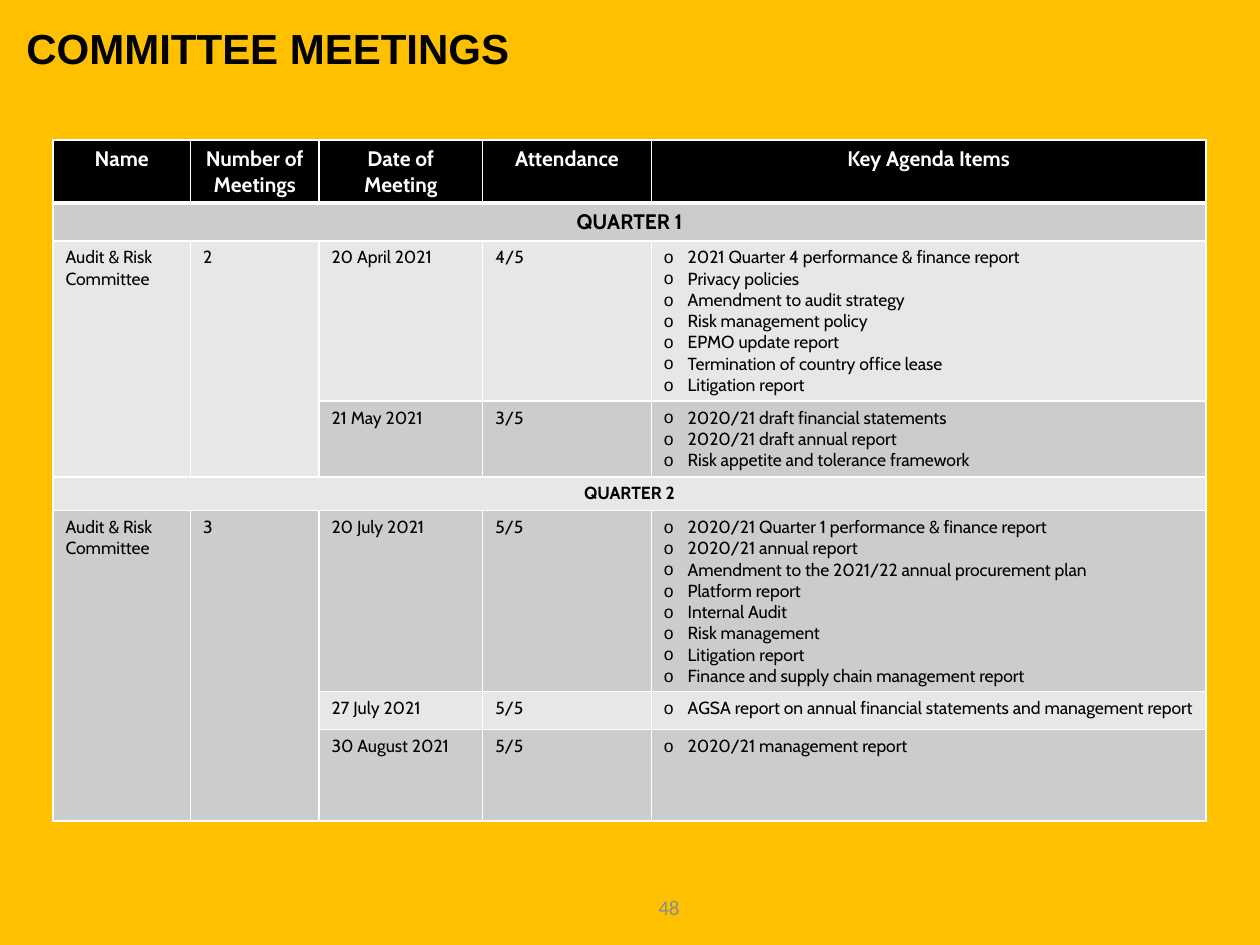
from lxml import etree
from pptx import Presentation
from pptx import util as u
from pptx.dml.color import RGBColor
from pptx.enum import text
from pptx.oxml.ns import qn

COLORS = {"back": "FFC000", "ink": "000000", "paper": "FFFFFF",
          "dark_band": "CCCCCC", "light_band": "E7E7E7", "number": "8C8C8C"}

COL_WIDTHS = [2.77, 2.59, 3.3, 3.4, 11.18]
ROW_HEIGHTS = [1.27, 0.74, 3.23, 1.52, 0.68, 3.65, 0.76, 1.85]
HEADINGS = ["Name", "Number of Meetings", "Date of Meeting", "Attendance",
            "Key Agenda Items"]

# Quarter, heading size, committee, meetings as (date, attendance, agenda)
QUARTERS = [
    ("QUARTER 1", 12, "Audit & Risk Committee", [
        ("20 April 2021", "4/5", [
            "2021 Quarter 4 performance & finance report",
            "Privacy policies",
            "Amendment to audit strategy",
            "Risk management policy",
            "EPMO update report",
            "Termination of country office lease",
            "Litigation report"]),
        ("21 May 2021", "3/5", [
            "2020/21 draft financial statements",
            "2020/21 draft annual report",
            "Risk appetite and tolerance framework"]),
    ]),
    ("QUARTER 2", 10, "Audit & Risk Committee", [
        ("20 July 2021", "5/5", [
            "2020/21 Quarter 1 performance & finance report",
            "2020/21 annual report",
            "Amendment to the 2021/22 annual procurement plan",
            "Platform report",
            "Internal Audit",
            "Risk management",
            "Litigation report",
            "Finance and supply chain management report"]),
        ("27 July 2021", "5/5", [
            "AGSA report on annual financial statements and management report"]),
        ("30 August 2021", "5/5", ["2020/21 management report"]),
    ]),
]


def rgb(name):
    return RGBColor.from_string(COLORS[name])


class Deck:
    """Holds the text style and the current slide."""
    table_font = "Cabin"
    left, center, right = (text.PP_ALIGN.LEFT, text.PP_ALIGN.CENTER,
                           text.PP_ALIGN.RIGHT)

    def __init__(self, prs):
        self.slide = prs.slides.add_slide(prs.slide_layouts[5])
        fill = self.slide.background.fill
        fill.solid()
        fill.fore_color.rgb = rgb("back")

    def add_text(self, p, words, size, font, color="ink", bold=False,
                 align=None):
        p.alignment = align or self.left
        r = p.add_run()
        r.text = words
        r.font.size, r.font.name, r.font.bold = u.Pt(size), font, bold
        r.font.color.rgb = rgb(color)

    def title(self, words, left, top, width, height):
        sp = self.slide.shapes.title
        sp.left, sp.top, sp.width, sp.height = map(
            u.Cm, (left, top, width, height))
        tf = sp.text_frame
        tf.auto_size = text.MSO_AUTO_SIZE.NONE
        tf.vertical_anchor = text.MSO_ANCHOR.TOP
        self.add_text(tf.paragraphs[0], words, 24, "Arial", bold=True,
                      align=self.center)

    def page_number(self, words, left, top, width, height):
        sp = self.slide.shapes.add_textbox(
            *map(u.Cm, (left, top, width, height)))
        tf = sp.text_frame
        tf.word_wrap = True
        tf.vertical_anchor = text.MSO_ANCHOR.MIDDLE
        self.add_text(tf.paragraphs[0], words, 12, "Calibri", "number",
                      align=self.right)

    def table(self, left, top, col_widths, row_heights):
        """Add an empty table with white rules and alternating bands."""
        table = self.slide.shapes.add_table(
            len(row_heights), len(col_widths), u.Cm(left), u.Cm(top),
            u.Cm(sum(col_widths)), u.Cm(sum(row_heights))).table
        for col, width in zip(table.columns, col_widths):
            col.width = u.Cm(width)
        for i, (row, height) in enumerate(zip(table.rows, row_heights)):
            row.height = u.Cm(height)
            band = "ink" if i == 0 else "dark_band" if i % 2 else "light_band"
            for cell in row.cells:
                self.borders(cell, top=3 if i == 1 else 1,
                             bottom=3 if i == 0 else 1)
                cell.fill.solid()
                cell.fill.fore_color.rgb = rgb(band)
        return table

    def borders(self, cell, top, bottom):
        tc_pr = cell._tc.get_or_add_tcPr()
        for side, points in zip("LRTB", (1, 1, top, bottom)):
            ln = etree.SubElement(tc_pr, qn(f"a:ln{side}"), w=str(u.Pt(points)))
            fill = etree.SubElement(ln, qn("a:solidFill"))
            etree.SubElement(fill, qn("a:srgbClr"), val=COLORS["paper"])

    def cell(self, cell, words, size=10, **style):
        self.add_text(cell.text_frame.paragraphs[0], words, size,
                      self.table_font, **style)

    def bullets(self, cell, items):
        tf = cell.text_frame
        indent = u.Cm(0.48)
        for i, item in enumerate(items):
            p = tf.add_paragraph() if i else tf.paragraphs[0]
            self.add_text(p, item, 10, self.table_font)
            p_pr = p._p.get_or_add_pPr()
            p_pr.set("marL", str(indent))
            p_pr.set("indent", str(-indent))
            etree.SubElement(p_pr, qn("a:buFont"), typeface="Arial")
            etree.SubElement(p_pr, qn("a:buChar"), char="o")


def fill_meetings(deck, table):
    for col, heading in enumerate(HEADINGS):
        deck.cell(table.cell(0, col), heading, 12, color="paper", bold=True,
                  align=deck.center)
    row = 1
    for quarter, size, committee, meetings in QUARTERS:
        table.cell(row, 0).merge(table.cell(row, len(HEADINGS) - 1))
        deck.cell(table.cell(row, 0), quarter, size, bold=True,
                  align=deck.center)
        first, last = row + 1, row + len(meetings)
        for col, words in enumerate((committee, str(len(meetings)))):
            table.cell(first, col).merge(table.cell(last, col))
            deck.cell(table.cell(first, col), words)
        for i, (date, attendance, agenda) in enumerate(meetings, first):
            deck.cell(table.cell(i, 2), date)
            deck.cell(table.cell(i, 3), attendance)
            deck.bullets(table.cell(i, 4), agenda)
        row = last + 1


def main():
    prs = Presentation()
    prs.slide_width, prs.slide_height = u.Cm(25.4), u.Cm(19.05)
    deck = Deck(prs)
    deck.page_number("48", 8.03, 17.78, 5.92, 1.02)
    deck.title("COMMITTEE MEETINGS", -0.66, 0.33, 12.12, 1.27)
    fill_meetings(deck, deck.table(1.07, 2.82, COL_WIDTHS, ROW_HEIGHTS))
    prs.save("out.pptx")


if __name__ == "__main__":
    main()
